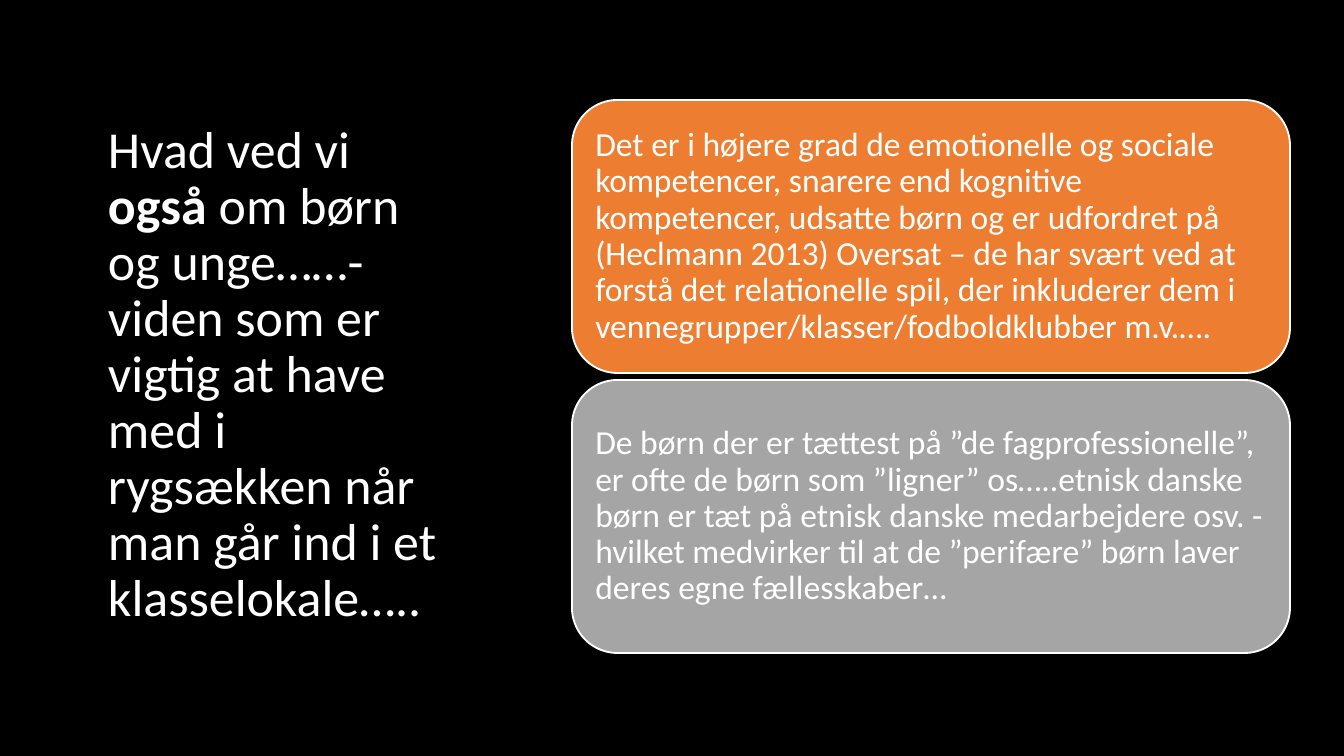
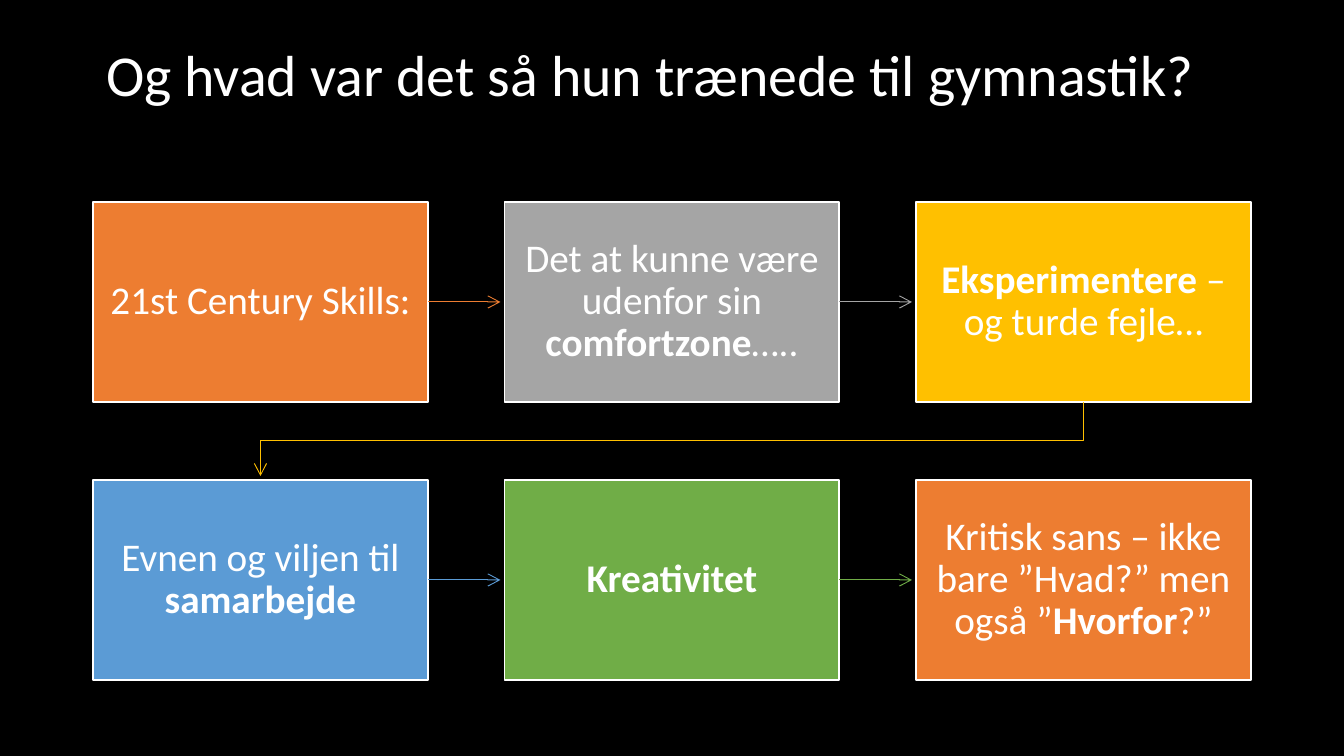
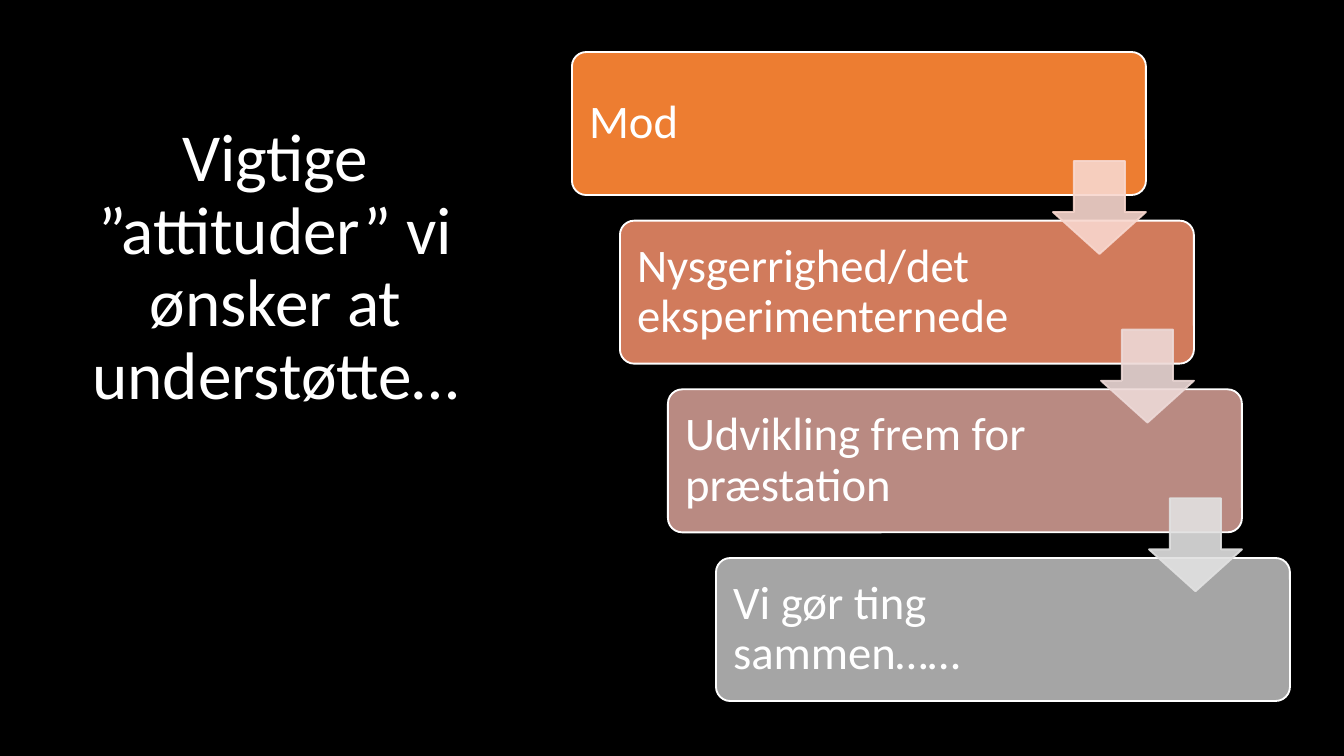
from lxml import etree
from pptx import Presentation
from pptx.dml.color import RGBColor
from pptx.enum.shapes import MSO_CONNECTOR, MSO_SHAPE
from pptx.enum.text import MSO_ANCHOR, MSO_AUTO_SIZE, PP_ALIGN
from pptx.oxml.ns import qn
from pptx.util import Emu, Pt

EMU_PER_PX = 914400 / 134.4
SLIDE_WIDTH, SLIDE_HEIGHT = 1344, 756
TITLE_ONLY = 5
FONT = "Calibri"

BLACK = RGBColor(0x00, 0x00, 0x00)
WHITE = RGBColor(0xFF, 0xFF, 0xFF)
ORANGE = RGBColor(0xED, 0x7D, 0x31)
GRAY = RGBColor(0xA5, 0xA5, 0xA5)
YELLOW = RGBColor(0xFF, 0xC0, 0x00)
BLUE = RGBColor(0x5B, 0x9B, 0xD5)
GREEN = RGBColor(0x70, 0xAD, 0x47)
TERRACOTTA = RGBColor(0xD1, 0x7B, 0x5C)
DUSTY_ROSE = RGBColor(0xB9, 0x8A, 0x82)
PALE_ORANGE = RGBColor(0xF8, 0xD7, 0xCE)
PALE_ROSE = RGBColor(0xED, 0xD9, 0xD7)
PALE_GRAY = RGBColor(0xE1, 0xE1, 0xE1)

RECTANGLE = MSO_SHAPE.RECTANGLE
ROUNDED = MSO_SHAPE.ROUNDED_RECTANGLE
DOWN_ARROW = MSO_SHAPE.DOWN_ARROW
STRAIGHT = MSO_CONNECTOR.STRAIGHT
TOP, MIDDLE, BOTTOM = MSO_ANCHOR.TOP, MSO_ANCHOR.MIDDLE, MSO_ANCHOR.BOTTOM
LEFT, CENTER = PP_ALIGN.LEFT, PP_ALIGN.CENTER
NO_AUTOFIT = MSO_AUTO_SIZE.NONE


def px(length):
    return Emu(round(length * EMU_PER_PX))


def write_text(shape, text, size, align, anchor, margins):
    """Write one white paragraph; text between ** marks is bold."""
    frame = shape.text_frame
    frame.word_wrap = True
    frame.auto_size = NO_AUTOFIT
    frame.vertical_anchor = anchor
    (frame.margin_left, frame.margin_top,
     frame.margin_right, frame.margin_bottom) = map(px, margins)
    paragraph = frame.paragraphs[0]
    paragraph.alignment = align
    paragraph.line_spacing = 0.9
    paragraph.font.name = FONT
    paragraph.font.size = Pt(size)
    paragraph.font.color.rgb = WHITE
    for index, part in enumerate(text.split("**")):
        if part:
            run = paragraph.add_run()
            run.text = part
            run.font.bold = index % 2 == 1


def add_titled_slide(presentation, title, box, size, align=LEFT, anchor=MIDDLE,
                     margins=(13, 7, 13, 7)):
    slide = presentation.slides.add_slide(presentation.slide_layouts[TITLE_ONLY])
    placeholder = slide.shapes.title
    (placeholder.left, placeholder.top,
     placeholder.width, placeholder.height) = map(px, box)
    write_text(placeholder, title, size, align, anchor, margins)
    return slide


def add_filled_shape(slide, kind, box, fill, outline=WHITE):
    shape = slide.shapes.add_shape(kind, *map(px, box))
    shape.shadow.inherit = False
    shape.fill.solid()
    shape.fill.fore_color.rgb = fill
    shape.line.color.rgb = outline
    shape.line.width = Pt(1)
    return shape


def style_arrow_line(shape, color):
    shape.line.width = Pt(0.5)
    shape.line.color.rgb = color
    properties = shape.element.spPr
    etree.SubElement(properties.find(qn("a:ln")), qn("a:tailEnd"), type="arrow")
    etree.SubElement(properties, qn("a:effectLst"))


def add_stacked_cards(slide, box, cards, gap):
    left, top, width, height = box
    card_height = (height - gap * (len(cards) - 1)) / len(cards)
    for index, (text, fill) in enumerate(cards):
        card_box = (left, top + index * (card_height + gap), width, card_height)
        card = add_filled_shape(slide, ROUNDED, card_box, fill)
        write_text(card, text, 18, LEFT, MIDDLE, (10, 10, 10, 10))


def add_skill_flow(slide, box, skills, columns=3):
    """Lay the skills out in rows, each joined to the next by an arrow."""
    left, top, width, height = box
    card_width, card_height, arrow_gap = 335, 200, 4
    column_step = (width - card_width) / (columns - 1)
    row_step = height - card_height
    for index, (text, fill) in enumerate(skills):
        row, column = divmod(index, columns)
        x, y = left + column * column_step, top + row * row_step
        card = add_filled_shape(slide, RECTANGLE, (x, y, card_width, card_height), fill)
        write_text(card, text, 21, CENTER, MIDDLE, (16, 17, 16, 17))
        if index == len(skills) - 1:
            continue
        if column < columns - 1:
            middle = y + card_height / 2
            ends = (x + card_width, middle, x + column_step - arrow_gap, middle)
            arrow = slide.shapes.add_connector(STRAIGHT, *map(px, ends))
        else:
            arrow = add_row_return(slide, x + card_width / 2, left + card_width / 2,
                                   y + card_height, y + row_step, arrow_gap)
        style_arrow_line(arrow, fill)


def add_row_return(slide, start_x, end_x, start_y, next_row, arrow_gap):
    """Draw the bent line from the end of one row to the start of the next."""
    turn_y = (start_y + next_row) / 2
    builder = slide.shapes.build_freeform(px(start_x), px(start_y))
    corners = [(start_x, turn_y), (end_x, turn_y), (end_x, next_row - arrow_gap)]
    builder.add_line_segments([(px(x), px(y)) for x, y in corners], close=False)
    line = builder.convert_to_shape()
    line.fill.background()
    return line


def add_staircase(slide, box, steps, arrow_colors):
    left, top, width, height = box
    step_width, step_height = 574, 143
    arrow_size, arrow_drop = 93, 109
    shift_x = (width - step_width) / (len(steps) - 1)
    shift_y = (height - step_height) / (len(steps) - 1)
    for index, (text, fill) in enumerate(steps):
        step_box = (left + index * shift_x, top + index * shift_y, step_width, step_height)
        step = add_filled_shape(slide, ROUNDED, step_box, fill)
        step.adjustments[0] = 0.1
        write_text(step, text, 25, LEFT, MIDDLE, (13, 13, 155, 13))
    for index, color in enumerate(arrow_colors):
        arrow_box = (left + index * shift_x + step_width - arrow_size,
                     top + index * shift_y + arrow_drop, arrow_size, arrow_size)
        arrow = add_filled_shape(slide, DOWN_ARROW, arrow_box, color, color)
        arrow.adjustments[0] = 0.55
        arrow.adjustments[1] = 0.45
        for color_element in arrow.element.spPr.iter(qn("a:srgbClr")):
            etree.SubElement(color_element, qn("a:alpha"), val="90000")


def build_knowledge_slide(presentation):
    slide = add_titled_slide(
        presentation,
        "Hvad ved vi **også **om børn og unge……- viden som er vigtig at have med i "
        "rygsækken når man går ind i et klasselokale…..",
        (95, 112, 376, 528), 27.8)
    add_stacked_cards(slide, (572, 100, 718, 553), [
        ("Det er i højere grad de emotionelle og sociale kompetencer, snarere end "
         "kognitive kompetencer, udsatte børn og er udfordret på (Heclmann 2013) "
         "Oversat – de har svært ved at forstå det relationelle spil, der inkluderer "
         "dem i vennegrupper/klasser/fodboldklubber m.v.….", ORANGE),
        ("De børn der er tættest på ”de fagprofessionelle”, er ofte de børn som "
         "”ligner” os…..etnisk danske børn er tæt på etnisk danske medarbejdere osv. - "
         "hvilket medvirker til at de ”perifære” børn laver deres egne fællesskaber…",
         GRAY),
    ], gap=7)


def build_skills_slide(presentation):
    slide = add_titled_slide(
        presentation, "Og hvad var det så hun trænede til gymnastik?",
        (93, 40, 1158, 147), 31, anchor=TOP)
    add_skill_flow(slide, (93, 202, 1158, 478), [
        ("21st Century Skills:", ORANGE),
        ("Det at kunne være udenfor sin **comfortzone**…..", GRAY),
        ("**Eksperimentere **– og turde fejle…", YELLOW),
        ("Evnen og viljen til **samarbejde**", BLUE),
        ("**Kreativitet**", GREEN),
        ("Kritisk sans – ikke bare ”Hvad?” men også ”**Hvorfor**?”", ORANGE),
    ])


def build_attitudes_slide(presentation):
    slide = add_titled_slide(
        presentation, "Vigtige ”attituder” vi ønsker at understøtte…",
        (74, 101, 403, 318), 36, CENTER, BOTTOM, (10, 5, 10, 5))
    add_staircase(slide, (572, 52, 718, 649), [
        ("Mod", ORANGE),
        ("Nysgerrighed/det eksperimenternede", TERRACOTTA),
        ("Udvikling frem for præstation", DUSTY_ROSE),
        ("Vi gør ting sammen……", GRAY),
    ], [PALE_ORANGE, PALE_ROSE, PALE_GRAY])


def main():
    presentation = Presentation()
    presentation.slide_width = px(SLIDE_WIDTH)
    presentation.slide_height = px(SLIDE_HEIGHT)
    background = presentation.slide_master.background.fill
    background.solid()
    background.fore_color.rgb = BLACK
    build_knowledge_slide(presentation)
    build_skills_slide(presentation)
    build_attitudes_slide(presentation)
    presentation.save("out.pptx")


if __name__ == "__main__":
    main()
